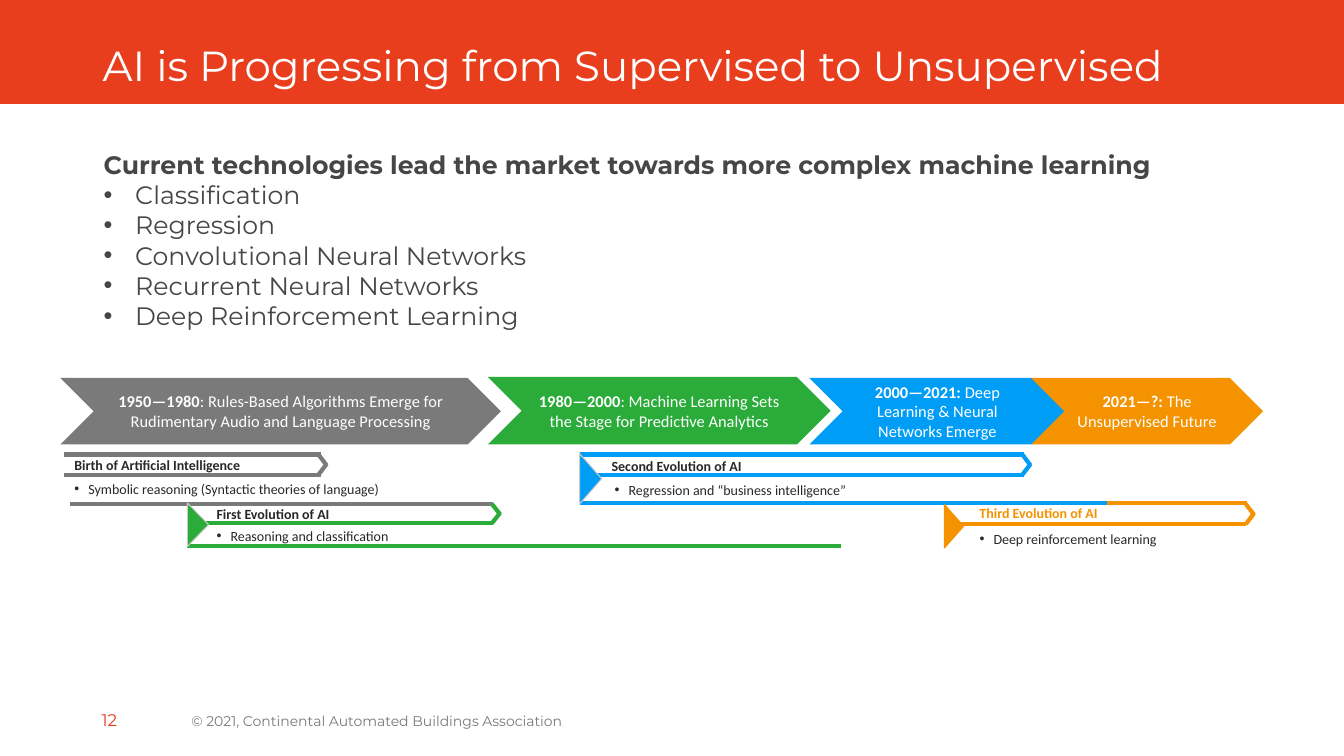
from lxml.etree import SubElement
from pptx import Presentation
from pptx.dml.color import RGBColor as Rgb
from pptx.enum.shapes import MSO_CONNECTOR as Link, MSO_SHAPE as Kind
from pptx.enum.text import MSO_ANCHOR as Anchor, PP_ALIGN as Align
from pptx.oxml.ns import qn
from pptx.util import Pt

GRAY, GREEN, BLUE, ORANGE = "7A7A7A", "2BAC3A", "009DF7", "F49200"
RED, WHITE, INK, BODY, EDGE = "E83E1D", "FFFFFF", "282828", "464646", "CACACA"
HEAD, SMALL = "Montserrat", "Calibri"

POINTS = ["Classification", "Regression", "Convolutional Neural Networks",
          "Recurrent Neural Networks", "Deep Reinforcement Learning"]
ERAS = [
    (43.2, 270, 314.6, GRAY, "1950—1980",
     ": Rules-Based Algorithms Emerge for Rudimentary Audio and Language Processing"),
    (348.5, 269.3, 244.8, GREEN, "1980—2000",
     ": Machine Learning Sets the Stage for Predictive Analytics"),
    (578.2, 270, 182.9, BLUE, "2000—2021: ", "Deep Learning & Neural Networks Emerge"),
    (736.6, 270, 165.6, ORANGE, "2021—?: ", "The Unsupervised Future"),
]
RAILS = [
    (46, 229, 324.7, GRAY), (46, 229, 339.1, GRAY), (49.7, 352, 360, GRAY),
    (414, 731.5, 324.7, BLUE), (414, 731.5, 339.1, BLUE),
    (133.5, 352, 373.7, GREEN), (133.5, 600.5, 390.2, GREEN),
    (675.4, 890, 374.4, ORANGE), (776.9, 890.6, 359.3, ORANGE),
    (414, 790.6, 359.3, BLUE),
]
TIPS = [(227.5, 324.7, 339.1, GRAY), (730.3, 324.7, 339.1, BLUE),
        (351.4, 360, 373.7, GREEN), (889.9, 360, 374.4, ORANGE)]
WEDGES = [(133.9, 359.3, 15.1, 31, GREEN, EDGE),
          (414, 324, 15.8, 36, BLUE, EDGE),
          (674.6, 360.4, 13.7, 31, ORANGE, ORANGE)]
NOTES = [
    (46.1, 322.6, 134.6, "Birth of Artificial Intelligence", INK,
     46.1, 339.8, 235.4, "Symbolic reasoning (Syntactic theories of language)"),
    (147.6, 357.8, 97.2, "First Evolution of AI", INK,
     147.6, 373, 139, "Reasoning and classification"),
    (429.8, 323.3, 108.7, "Second Evolution of AI", INK,
     432, 340.6, 182.2, "Regression and “business intelligence”"),
    (692.6, 357.1, 100.8, "Third Evolution of AI", ORANGE,
     692.6, 375.1, 143.3, "Deep reinforcement learning"),
]


def tint(code):
    """Turn a hex string into a colour."""
    return Rgb.from_string(code)


def style(para, face, size, hue, bold=False):
    """Set the font of a paragraph."""
    font = para.font
    font.name, font.size, font.bold = face, Pt(size), bold
    font.color.rgb = tint(hue)


def bullet(para, indent):
    """Give a paragraph a hanging round bullet."""
    props = para._p.get_or_add_pPr()
    props.set("marL", str(Pt(indent)))
    props.set("indent", str(-Pt(indent)))
    SubElement(props, qn("a:buFont"), typeface="Arial")
    SubElement(props, qn("a:buChar"), char="•")


def text(slide, left, top, width, height, words, face, size, hue,
         bold=False, indent=0, wrap=True, anchor=Anchor.TOP):
    """Add a text box with one paragraph and return its frame."""
    box = slide.shapes.add_textbox(Pt(left), Pt(top), Pt(width), Pt(height))
    frame = box.text_frame
    frame.word_wrap, frame.vertical_anchor = wrap, anchor
    para = frame.paragraphs[0]
    para.text = words
    if indent:
        bullet(para, indent)
    style(para, face, size, hue, bold)
    return frame


def block(slide, kind, left, top, width, height, fill, edge=None):
    """Add a filled shape, with a thin edge if one is given."""
    item = slide.shapes.add_shape(kind, Pt(left), Pt(top), Pt(width), Pt(height))
    item.shadow.inherit = False
    item.fill.solid()
    item.fill.fore_color.rgb = tint(fill)
    if edge:
        item.line.color.rgb = tint(edge)
        item.line.width = Pt(0.75)
    else:
        item.line.fill.background()
    return item


def era(slide, left, top, width, hue, years, words):
    """Add a chevron with bold years and a plain caption."""
    frame = block(slide, Kind.CHEVRON, left, top, width, 317.5 - top, hue).text_frame
    frame.word_wrap, frame.vertical_anchor = True, Anchor.MIDDLE
    frame.margin_left = frame.margin_right = Pt(6)
    frame.margin_top = frame.margin_bottom = Pt(3)
    para = frame.paragraphs[0]
    para.alignment = Align.CENTER
    style(para, SMALL, 11.7, WHITE)
    for part, bold in ((years, True), (words, False)):
        run = para.add_run()
        run.text, run.font.bold = part, bold


def stroke(slide, x1, y1, x2, y2, hue):
    """Add a straight line three points wide."""
    line = slide.shapes.add_connector(Link.STRAIGHT, Pt(x1), Pt(y1), Pt(x2), Pt(y2))
    line.line.color.rgb = tint(hue)
    line.line.width = Pt(3)
    SubElement(line._element.spPr, qn("a:effectLst"))


def tip(slide, left, top, low, hue):
    """Close two rails with a point at the right."""
    mid = (top + low) / 2
    stroke(slide, left, low, left + 5.8, mid - 0.5, hue)
    stroke(slide, left, top, left + 5.8, mid + 0.5, hue)


def wedge(slide, left, top, width, height, hue, edge):
    """Add a triangle that points right and fills the given area."""
    shift = (height - width) / 2
    item = block(slide, Kind.ISOSCELES_TRIANGLE, left - shift, top + shift,
                 height, width, hue, edge)
    item.rotation = 90


def note(slide, left, top, width, name, hue, left2, top2, width2, words):
    """Add the bold name of a step and its bullet."""
    text(slide, left, top, width, 19.4, name, SMALL, 10, hue, bold=True, wrap=False)
    text(slide, left2, top2, width2, 19.4, words, SMALL, 10, INK, indent=10, wrap=False)


def main():
    """Build the slide and save it."""
    deck = Presentation()
    deck.slide_width, deck.slide_height = Pt(960), Pt(540)
    slide = deck.slides.add_slide(deck.slide_layouts[6])
    block(slide, Kind.RECTANGLE, 0, 0, 960, 74.2, RED)
    title = text(slide, 66.2, 28.8, 804.2, 35.3,
                 "AI is Progressing from Supervised to Unsupervised", HEAD, 30, WHITE)
    title.paragraphs[0].line_spacing = 0.9
    text(slide, 129.6, 500.4, 349.2, 28.8,
         "© 2021, Continental Automated Buildings Association",
         HEAD, 10, GRAY, anchor=Anchor.MIDDLE)
    text(slide, 65.5, 500.4, 49, 28.1, "12", HEAD, 12, RED, anchor=Anchor.MIDDLE)
    for row in ERAS:
        era(slide, *row)
    for start, end, level, hue in RAILS:
        stroke(slide, start, level, end, level, hue)
    for row in TIPS:
        tip(slide, *row)
    for row in NOTES:
        note(slide, *row)
    for row in WEDGES:
        wedge(slide, *row)
    frame = text(slide, 67, 103, 782.6, 138.2,
                 "Current technologies lead the market towards more complex machine learning",
                 HEAD, 18, BODY, bold=True)
    for words in POINTS:
        para = frame.add_paragraph()
        para.text = words
        bullet(para, 22.5)
        style(para, HEAD, 18, BODY)
    deck.save("out.pptx")


if __name__ == "__main__":
    main()
